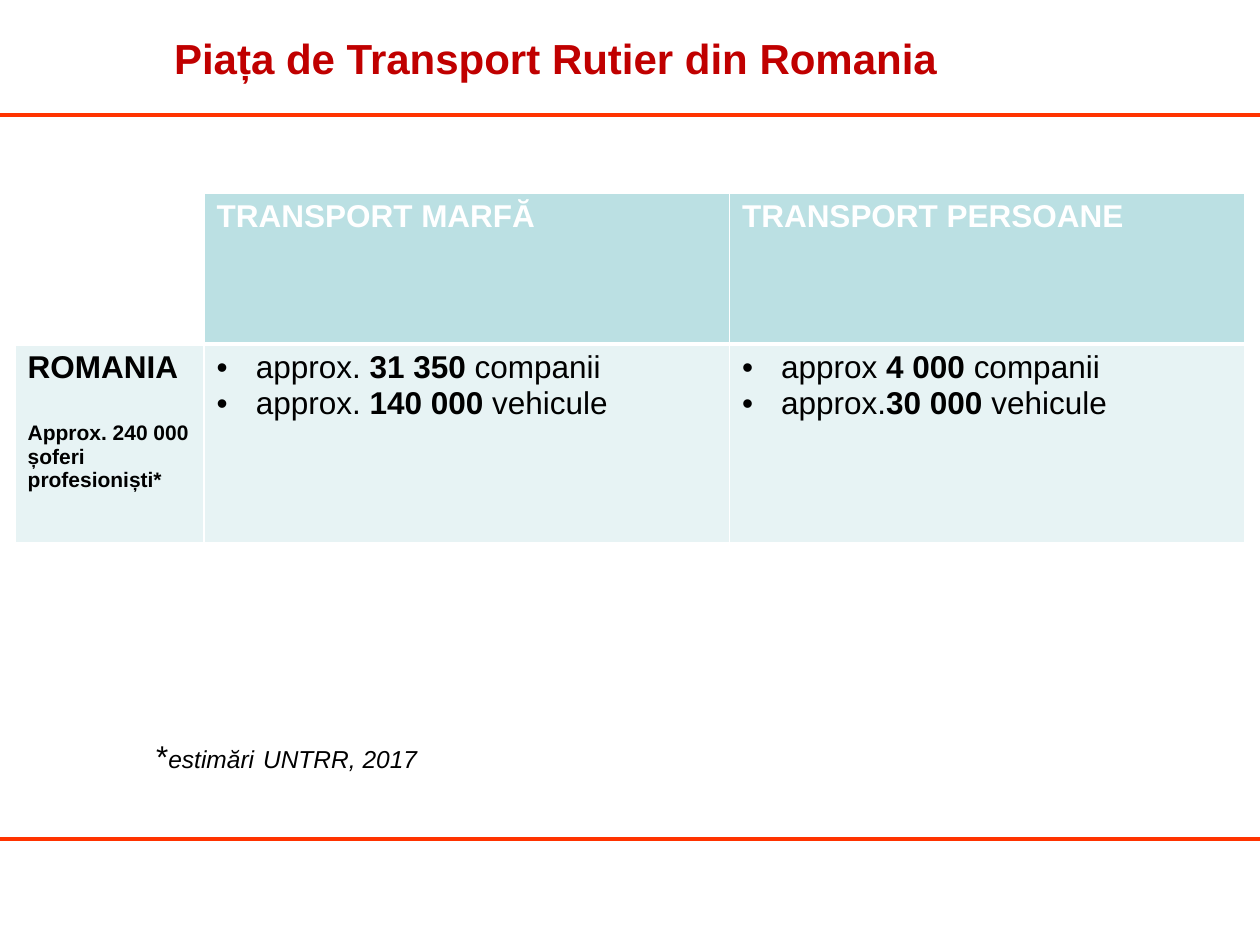
from lxml.etree import SubElement
from pptx import Presentation
from pptx.dml.color import RGBColor
from pptx.enum.shapes import MSO_CONNECTOR
from pptx.enum.text import MSO_ANCHOR, MSO_AUTO_SIZE, PP_ALIGN
from pptx.oxml.ns import qn
from pptx.util import Inches, Pt

COLORS = {"rule": "FF3300", "title": "C00000", "head": "BBE0E3",
          "body": "E7F3F4", "white": "FFFFFF", "text": "000000"}
TITLE = "Piața de Transport Rutier din Romania"
HEADERS = ["", "TRANSPORT MARFĂ", "TRANSPORT PERSOANE"]
COUNTRY = [("ROMANIA", 18), ("Approx. 240 000 șoferi profesioniști*", 12)]
MARKETS = [
    [("approx. ", "31 350 ", "companii"), ("approx. ", "140 000 ", "vehicule")],
    [("approx ", "4 000 ", "companii"), ("approx.", "30 000 ", "vehicule")],
]
NOTE = [("*", 18, False), ("estimări", 14, True), (" ", 18, False),
        ("UNTRR, 2017", 14, True)]
COL_WIDTHS = [1.5, 4.17, 4.09]
ROW_HEIGHTS = [1.2, 1.58]
RULES_Y = [0.91, 6.66]


def rgb(name):
    return RGBColor.from_string(COLORS[name])


def add_run(p, text, size, color="text", bold=False, italic=False):
    r = p.add_run()
    r.text = text
    r.font.name = "Arial"
    r.font.size = Pt(size)
    r.font.bold = bold
    r.font.italic = italic
    r.font.color.rgb = rgb(color)


def add_rule(s, y):
    line = s.shapes.add_connector(MSO_CONNECTOR.STRAIGHT, 0, Inches(y), Inches(10), Inches(y))
    line.line.color.rgb = rgb("rule")
    line.line.width = Pt(2.25)
    SubElement(line._element.spPr, qn("a:effectLst"))


def add_bullet(p):
    pPr = p._p.get_or_add_pPr()
    pPr.set("marL", str(Inches(0.31)))
    pPr.set("indent", str(-Inches(0.31)))
    SubElement(pPr, qn("a:buFont"), typeface="Arial")
    SubElement(pPr, qn("a:buChar"), char="•")


def style_cell(cell, fill, top, bottom):
    tcPr = cell._tc.get_or_add_tcPr()
    for side, width in (("L", 1), ("R", 1), ("T", top), ("B", bottom)):
        ln = SubElement(tcPr, qn(f"a:ln{side}"), w=str(Pt(width)))
        SubElement(SubElement(ln, qn("a:solidFill")), qn("a:srgbClr"), val=COLORS["white"])
    if fill:
        cell.fill.solid()
        cell.fill.fore_color.rgb = rgb(fill)
    else:
        cell.fill.background()


def next_paragraph(tf, i):
    return tf.add_paragraph() if i else tf.paragraphs[0]


def add_title(s):
    sp = s.shapes.title
    sp.left, sp.top, sp.width, sp.height = map(Inches, (0.75, 0.21, 7.32, 0.5))
    tf = sp.text_frame
    tf.auto_size = MSO_AUTO_SIZE.NONE
    tf.vertical_anchor = MSO_ANCHOR.TOP
    p = tf.paragraphs[0]
    p.alignment = PP_ALIGN.CENTER
    add_run(p, TITLE, 24, "title", bold=True)


def add_market_table(s):
    frame = s.shapes.add_table(2, 3, Inches(0.12), Inches(1.53),
                               Inches(sum(COL_WIDTHS)), Inches(sum(ROW_HEIGHTS)))
    table = frame.table
    table.first_row = table.horz_banding = False
    for col, width in zip(table.columns, COL_WIDTHS):
        col.width = Inches(width)
    for row, height in zip(table.rows, ROW_HEIGHTS):
        row.height = Inches(height)
    for c, header in enumerate(HEADERS):
        style_cell(table.cell(0, c), "head" if header else None, 1, 3)
        style_cell(table.cell(1, c), "body", 3, 1)
        if header:
            p = table.cell(0, c).text_frame.paragraphs[0]
            add_run(p, header, 18, "white", bold=True)
    for i, (text, size) in enumerate(COUNTRY):
        p = next_paragraph(table.cell(1, 0).text_frame, i)
        if i:
            p.space_before = Pt(20.7)
        add_run(p, text, size, bold=True)
    for c, facts in enumerate(MARKETS, 1):
        for i, (lead, number, unit) in enumerate(facts):
            p = next_paragraph(table.cell(1, c).text_frame, i)
            add_bullet(p)
            add_run(p, lead, 18)
            add_run(p, number, 18, bold=True)
            add_run(p, unit, 18)


def add_note(s):
    tf = s.shapes.add_textbox(*map(Inches, (1.14, 5.8, 5.28, 0.4))).text_frame
    tf.word_wrap = True
    for text, size, italic in NOTE:
        add_run(tf.paragraphs[0], text, size, italic=italic)


def main():
    """Build the Romanian road transport market slide."""
    prs = Presentation()
    prs.slide_width, prs.slide_height = Inches(10), Inches(7.5)
    s = prs.slides.add_slide(prs.slide_layouts[5])
    for y in RULES_Y:
        add_rule(s, y)
    add_title(s)
    add_market_table(s)
    add_note(s)
    prs.save("out.pptx")


if __name__ == "__main__":
    main()
